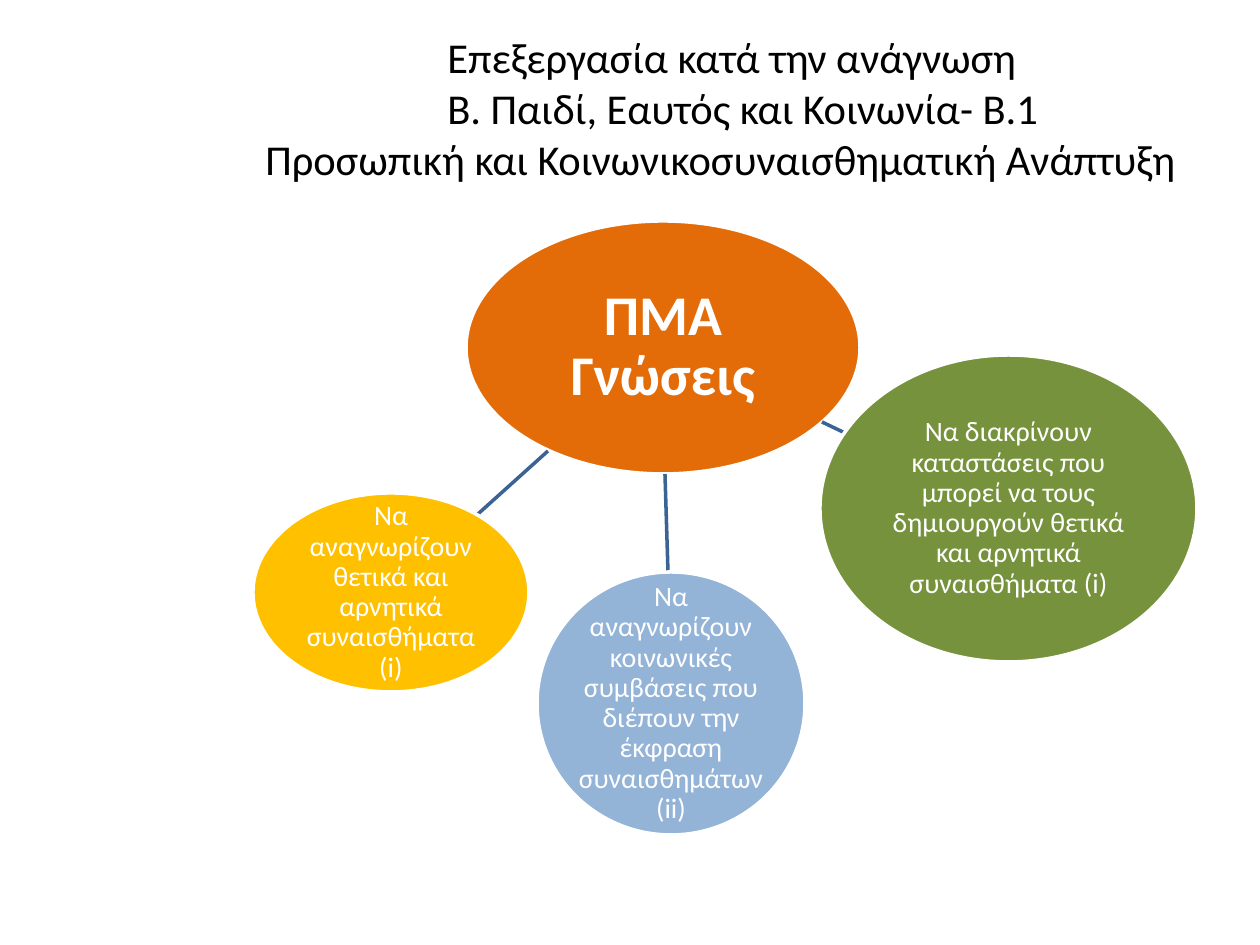
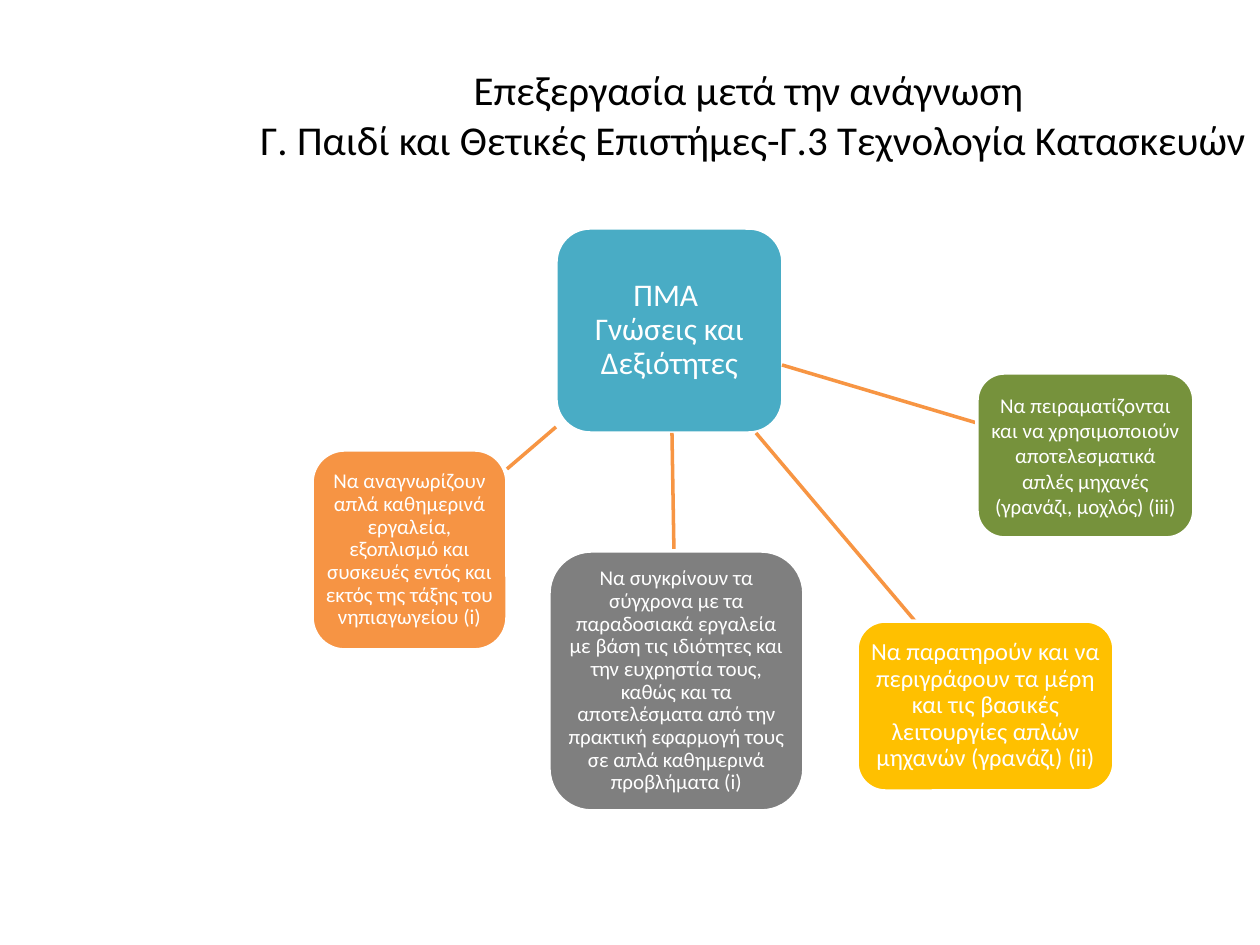
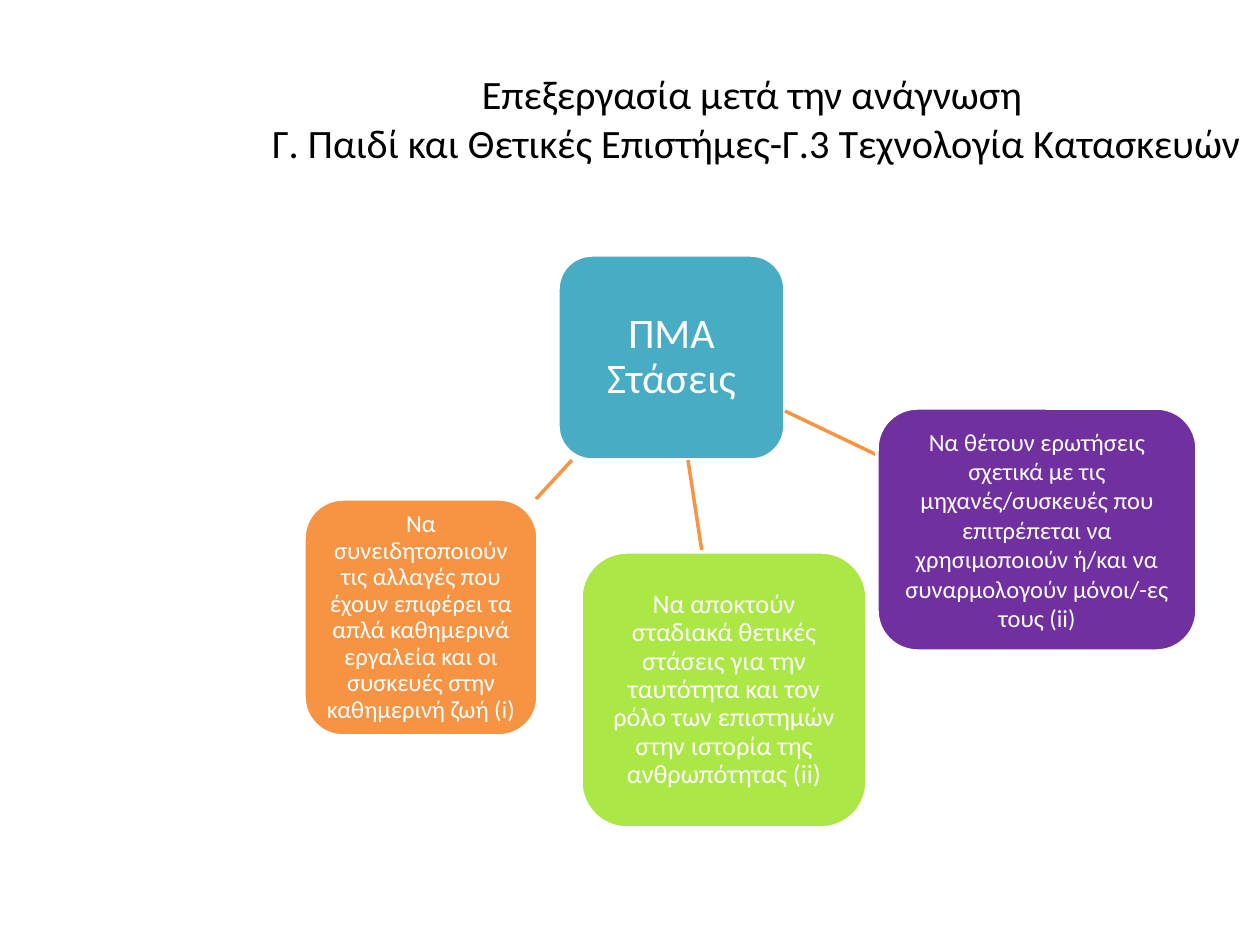
from lxml.etree import SubElement
from pptx import Presentation
from pptx.dml.color import RGBColor
from pptx.enum.shapes import MSO_CONNECTOR, MSO_SHAPE
from pptx.enum.text import MSO_ANCHOR, PP_ALIGN
from pptx.oxml.ns import qn
from pptx.util import Emu, Pt

FONT = "Calibri"
BLACK, WHITE = "000000", "FFFFFF"
ORANGE, AMBER, GREEN, TEAL = "F69444", "FFC000", "76923C", "49ACC5"
BLUE_LINK, ORANGE_LINK = "3B6495", "F79543"
OVAL, ROUNDED = MSO_SHAPE.OVAL, MSO_SHAPE.ROUNDED_RECTANGLE
INSET_PER_POINT = {OVAL: 0.1, ROUNDED: 0.35}
TITLE_HEIGHT = 158
TECHNOLOGY_TITLE = ("Επεξεργασία μετά την ανάγνωση \n"
                    "Γ. Παιδί και Θετικές Επιστήμες-Γ.3 Τεχνολογία Κατασκευών")


def px(value):
    """Convert pixels to EMU."""
    return Emu(round(value * 914400 / 126))


def rgb(color):
    """Convert a hex string to a colour."""
    return RGBColor.from_string(color)


def set_text(tf, text, size, color, bold=False, align=PP_ALIGN.CENTER, spacing=1.0):
    """Fill a text frame and format its runs."""
    tf.word_wrap = True
    tf.vertical_anchor = MSO_ANCHOR.MIDDLE
    tf.text = text
    for p in tf.paragraphs:
        p.alignment = align
        p.line_spacing = spacing
        for r in p.runs:
            r.font.name = FONT
            r.font.size = Pt(size)
            r.font.bold = bold
            r.font.color.rgb = rgb(color)


def add_title(s, left, top, width, text, size, align=PP_ALIGN.CENTER, indent=0):
    """Add the slide title, optionally with a first-line indent."""
    tf = s.shapes.add_textbox(px(left), px(top), px(width), px(TITLE_HEIGHT)).text_frame
    set_text(tf, text, size, BLACK, align=align)
    if indent:
        for p in tf.paragraphs:
            p._p.get_or_add_pPr().set("indent", str(px(indent)))


def add_node(s, kind, box, color, text, size, bold=False, spacing=0.9):
    """Add a filled, white-edged shape with its text."""
    sp = s.shapes.add_shape(kind, *map(px, box))
    sp.shadow.inherit = False
    sp.fill.solid()
    sp.fill.fore_color.rgb = rgb(color)
    sp.line.color.rgb = rgb(WHITE)
    sp.line.width = Pt(2)
    tf = sp.text_frame
    inset = px(round(size * INSET_PER_POINT[kind]))
    tf.margin_left = tf.margin_right = tf.margin_top = tf.margin_bottom = inset
    set_text(tf, text, size, WHITE, bold, spacing=spacing)


def add_link(s, ends, color):
    """Add a straight line from the hub to a goal."""
    line = s.shapes.add_connector(MSO_CONNECTOR.STRAIGHT, *map(px, ends))
    line.line.color.rgb = rgb(color)
    line.line.width = Pt(2)
    SubElement(line._element.spPr, qn("a:effectLst"))


def add_diagram(s, kind, link_color, hub, goals):
    """Add the hub, then each goal with its link."""
    add_node(s, kind, *hub)
    for ends, *goal in goals:
        add_link(s, ends, link_color)
        add_node(s, kind, *goal)


def add_social_slide(s):
    """Build the slide on personal and social development."""
    add_title(s, 253, 28, 1002,
              "Επεξεργασία κατά την ανάγνωση\n"
              "Β. Παιδί, Εαυτός και Κοινωνία- Β.1 "
              "Προσωπική και Κοινωνικοσυναισθηματική Ανάπτυξη",
              24.3, PP_ALIGN.LEFT, 182)
    hub = (466, 221, 394, 253), "E36C09", "ΠΜΑ Γνώσεις", 32, True
    add_diagram(s, OVAL, BLUE_LINK, hub, [
        ((548, 451, 478, 514), (253, 493, 276, 199), AMBER,
         "Να αναγνωρίζουν θετικά και αρνητικά συναισθήματα (i)", 16),
        ((822, 422, 845, 433), (820, 355, 377, 307), GREEN,
         "Να διακρίνουν καταστάσεις που μπορεί να τους δημιουργούν "
         "θετικά και αρνητικά συναισθήματα (i)", 16),
        ((665, 474, 668, 572), (537, 572, 268, 263), "93B3D7",
         "Να αναγνωρίζουν κοινωνικές συμβάσεις που διέπουν την "
         "έκφραση συναισθημάτων (ii)", 16),
    ])


def add_skills_slide(s):
    """Build the slide on technology knowledge and skills."""
    add_title(s, 232, 35, 1042, TECHNOLOGY_TITLE, 23.4)
    hub = (556, 228, 227, 205), TEAL, "ΠΜΑ \nΓνώσεις και Δεξιότητες", 18
    add_diagram(s, ROUNDED, ORANGE_LINK, hub, [
        ((782, 365, 977, 423), (977, 373, 217, 165), GREEN,
         "Να πειραματίζονται και να χρησιμοποιούν αποτελεσματικά "
         "απλές μηχανές (γρανάζι, μοχλός) (iii)", 12, False, 1.0),
        ((672, 433, 674, 551), (549, 551, 255, 260), "7F7F7F",
         "Να συγκρίνουν τα σύγχρονα με τα παραδοσιακά εργαλεία με βάση "
         "τις ιδιότητες και την ευχρηστία τους, καθώς και τα αποτελέσματα "
         "από την πρακτική εφαρμογή τους σε απλά καθημερινά προβλήματα (i)", 12),
        ((756, 433, 915, 621), (857, 621, 257, 170), AMBER,
         "Να παρατηρούν και να περιγράφουν τα μέρη και τις βασικές "
         "λειτουργίες απλών μηχανών (γρανάζι) (ii)", 14),
        ((556, 427, 507, 469), (312, 450, 195, 200), ORANGE,
         "Να αναγνωρίζουν απλά καθημερινά εργαλεία, εξοπλισμό και συσκευές "
         "εντός και εκτός της τάξης του νηπιαγωγείου (i)", 12),
    ])


def add_attitudes_slide(s):
    """Build the slide on attitudes to technology."""
    add_title(s, 244, 39, 1026, TECHNOLOGY_TITLE, 23)
    hub = (558, 255, 227, 205), TEAL, "ΠΜΑ Στάσεις", 24
    add_diagram(s, ROUNDED, ORANGE_LINK, hub, [
        ((785, 411, 877, 455), (877, 408, 320, 243), "7030A0",
         "Να θέτουν ερωτήσεις σχετικά με τις μηχανές/συσκευές που επιτρέπεται "
         "να χρησιμοποιούν ή/και να συναρμολογούν μόνοι/-ες τους (ii)", 14, False, 1.0),
        ((688, 460, 702, 552), (581, 552, 286, 276), "ABE745",
         "Να αποκτούν σταδιακά θετικές στάσεις για την ταυτότητα και τον ρόλο "
         "των επιστημών στην ιστορία της ανθρωπότητας (ii)", 15),
        ((572, 460, 536, 499), (304, 499, 234, 237), ORANGE,
         "Να συνειδητοποιούν τις αλλαγές που έχουν επιφέρει τα απλά καθημερινά "
         "εργαλεία και οι συσκευές στην καθημερινή ζωή (i)", 14),
    ])


def main():
    """Build and save the presentation."""
    prs = Presentation()
    prs.slide_width, prs.slide_height = px(1260), px(945)
    for build in (add_social_slide, add_skills_slide, add_attitudes_slide):
        build(prs.slides.add_slide(prs.slide_layouts[6]))
    prs.save("out.pptx")


if __name__ == "__main__":
    main()
